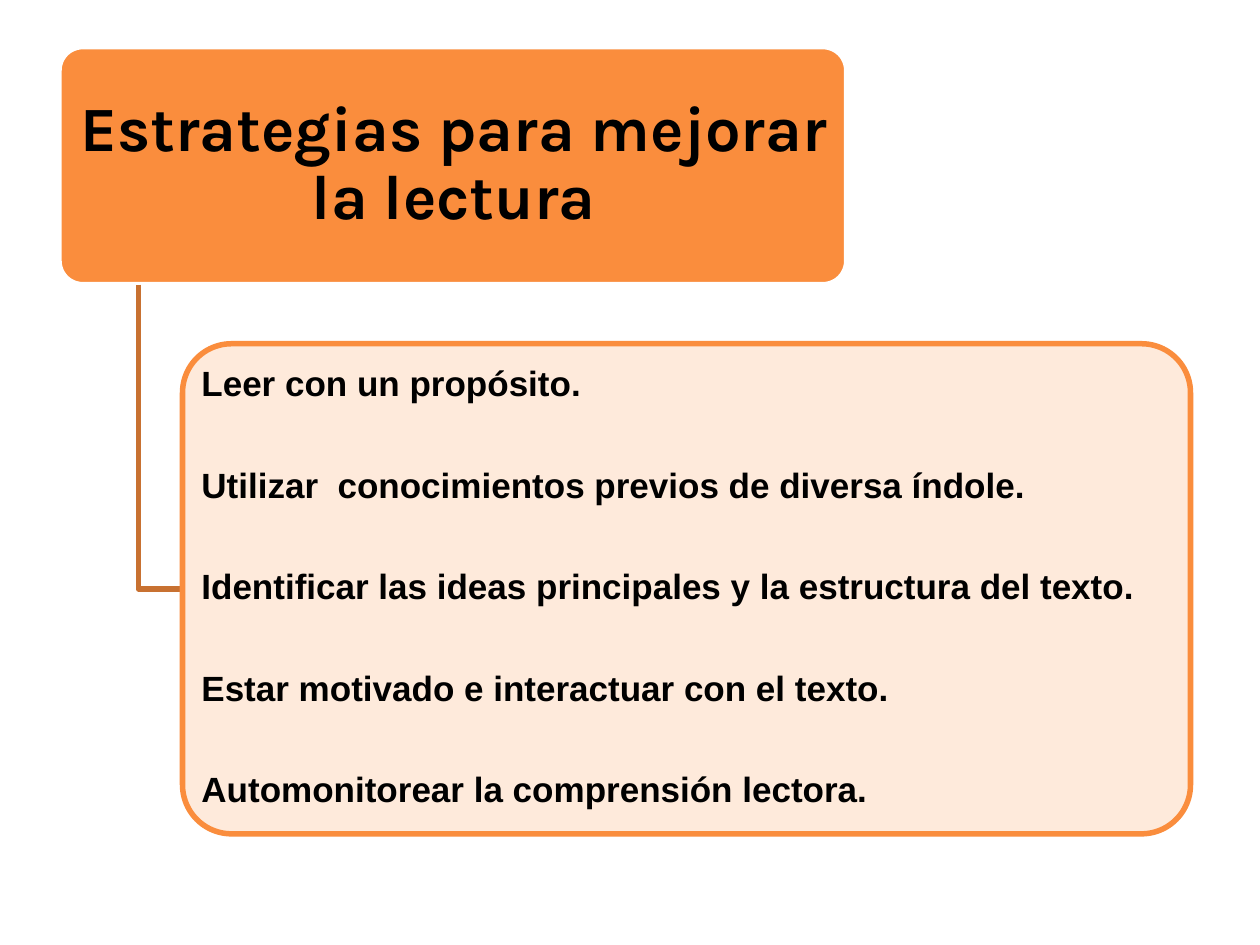
from lxml.etree import SubElement
from pptx import Presentation
from pptx.dml.color import RGBColor
from pptx.enum.shapes import MSO_SHAPE
from pptx.enum.text import MSO_ANCHOR, MSO_AUTO_SIZE, PP_ALIGN
from pptx.oxml.ns import qn
from pptx.util import Cm, Pt

ROUND = MSO_SHAPE.ROUNDED_RECTANGLE
MIDDLE = MSO_ANCHOR.MIDDLE
FIXED = MSO_AUTO_SIZE.NONE
CENTER = PP_ALIGN.CENTER
LEFT = PP_ALIGN.LEFT

ORANGE = "FA8D3D"
STROKE = Pt(3.15)
TITLE = "Estrategias para mejorar la lectura"
ITEMS = [
    "Leer con un propósito.",
    "Utilizar  conocimientos previos de diversa índole.",
    "Identificar las ideas principales y la estructura del texto.",
    "Estar motivado e interactuar con el texto.",
    "Automonitorear la comprensión lectora.",
]


def paint(form, color):
    form.solid()
    form.fore_color.rgb = RGBColor.from_string(color)


def apply(item, values):
    for name, value in values.items():
        setattr(item, name, value)


def edge(shape, color):
    shape.shadow.inherit = False
    paint(shape.line.fill, color)
    shape.line.width = STROKE


def add_card(slide, box, fill, line, alpha=None):
    card = slide.shapes.add_shape(ROUND, *map(Cm, box))
    card.adjustments[0] = 0.1
    paint(card.fill, fill)
    if alpha:
        color = next(card.element.iter(qn("a:srgbClr")))
        SubElement(color, qn("a:alpha"), val=str(alpha * 1000))
    edge(card, line)


def add_elbow(slide, points, color):
    start, *rest = [tuple(map(Cm, point)) for point in points]
    form = slide.shapes.build_freeform(*start)
    form.add_line_segments(rest, close=False)
    elbow = form.convert_to_shape()
    elbow.fill.background()
    edge(elbow, color)


def put_text(slide, holder, box, lines, inset, font, align, gap=0):
    slide.shapes.element.append(holder.element)
    apply(holder, dict(zip(("left", "top", "width", "height"), map(Cm, box))))
    side, top = map(Cm, inset)
    frame = holder.text_frame
    frame.text = "\n".join(lines)
    apply(frame, {
        "word_wrap": True, "auto_size": FIXED, "vertical_anchor": MIDDLE,
        "margin_left": side, "margin_right": side,
        "margin_top": top, "margin_bottom": top,
    })
    for index, para in enumerate(frame.paragraphs):
        props = para._p.get_or_add_pPr()
        props.set("marL", "0")
        props.set("indent", "0")
        SubElement(props, qn("a:buNone"))
        apply(para, {
            "alignment": align, "line_spacing": 0.9,
            "space_before": Pt(gap if index else 0), "space_after": Pt(0),
        })
        apply(para.font, {"bold": True, **font})
        paint(para.font.fill, "000000")


def main():
    deck = Presentation()
    deck.slide_width, deck.slide_height = Cm(25.4), Cm(19.05)
    slide = deck.slides.add_slide(deck.slide_layouts[1])
    title, body = slide.placeholders

    add_card(slide, (1.19, 0.94, 15.88, 4.8), ORANGE, "FFFFFF")
    add_elbow(slide, [(2.79, 5.74), (2.79, 11.87), (3.68, 11.87)], "C87131")
    add_card(slide, (3.68, 6.93, 20.32, 9.88), "FEE8D8", ORANGE, 90)
    put_text(slide, title, (1.35, 1.07, 15.6, 4.52), [TITLE], (0.18, 0.13),
             {"name": "Karla", "size": Pt(36)}, CENTER)
    put_text(slide, body, (3.96, 7.21, 19.74, 9.3), ITEMS, (0.1, 0.08),
             {"name": "Arial", "size": Pt(20)}, LEFT, 36.4)
    deck.save("out.pptx")


if __name__ == "__main__":
    main()
